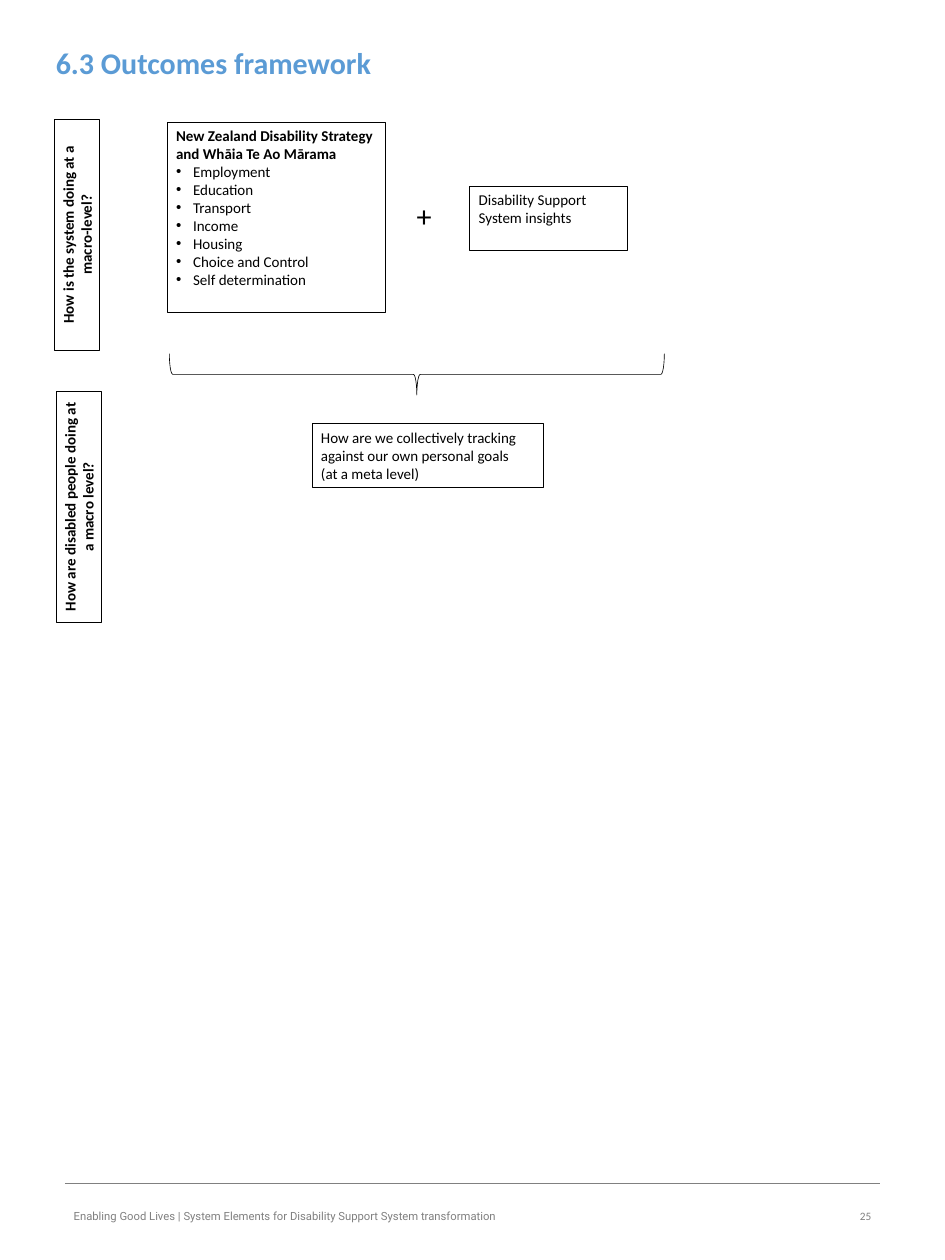
from dataclasses import dataclass

from lxml import etree
from pptx import Presentation
from pptx.dml.color import RGBColor
from pptx.enum import shapes, text
from pptx.oxml import ns
from pptx.util import Cm, Pt


@dataclass(frozen=True)
class Theme:
    font: str = "Calibri"
    footer_font: str = "Roboto"
    accent: RGBColor = RGBColor(0x5B, 0x9B, 0xD5)
    ink: RGBColor = RGBColor(0, 0, 0)
    muted: RGBColor = RGBColor(0x80, 0x80, 0x80)
    title: float = 24
    symbol: float = 24.1
    body: float = 12
    footer: float = 9


THEME = Theme()
LEFT, CENTER, RIGHT = text.PP_ALIGN.LEFT, text.PP_ALIGN.CENTER, text.PP_ALIGN.RIGHT
TOP, MIDDLE = text.MSO_ANCHOR.TOP, text.MSO_ANCHOR.MIDDLE
INDENT = Cm(0.48)
FOOTER_TOP, FOOTER_HEIGHT = 33.38, 1.9


def write(shape, lines, size=THEME.body, color=THEME.ink, font=THEME.font,
          bold=False, align=LEFT, anchor=TOP):
    frame = shape.text_frame
    frame.text = "\n".join(lines)
    frame.word_wrap = True
    frame.auto_size = text.MSO_AUTO_SIZE.NONE
    frame.vertical_anchor = anchor
    for para in frame.paragraphs:
        para.alignment = align
        for span in para.runs:
            span.font.name = font
            span.font.size = Pt(size)
            span.font.bold = bold
            span.font.color.rgb = color


def add_title(page, title):
    shape = page.shapes.title
    shape.left, shape.top, shape.width, shape.height = Cm(1.32), Cm(1.12), Cm(22.53), Cm(1.27)
    write(shape, [title], THEME.title, THEME.accent, bold=True)


def add_text(page, left, top, width, height, words, **style):
    box = page.shapes.add_textbox(Cm(left), Cm(top), Cm(width), Cm(height))
    write(box, [words], **style)


def add_outline(page, kind, left, top, width, height, weight=0.75, rotation=0):
    shape = page.shapes.add_shape(kind, Cm(left), Cm(top), Cm(width), Cm(height))
    shape.shadow.inherit = False
    shape.fill.background()
    shape.line.color.rgb = THEME.ink
    shape.line.width = Pt(weight)
    shape.rotation = rotation
    return shape


def add_box(page, left, top, width, height, lines, rotation=0, **style):
    box = add_outline(page, shapes.MSO_SHAPE.RECTANGLE, left, top, width, height,
                      rotation=rotation)
    write(box, lines, **style)
    return box


def add_side_label(page, left, top, question):
    add_box(page, left, top, 6.53, 1.27, [question], rotation=270, bold=True, align=CENTER)


def add_bullet(para):
    properties = para._p.get_or_add_pPr()
    properties.set("marL", str(INDENT))
    properties.set("indent", str(-INDENT))
    etree.SubElement(properties, ns.qn("a:buFont"), typeface="Arial")
    etree.SubElement(properties, ns.qn("a:buChar"), char="•")


def add_bullet_box(page, left, top, width, height, heading, items):
    box = add_box(page, left, top, width, height, [heading, *items])
    first, *rest = box.text_frame.paragraphs
    first.runs[0].font.bold = True
    for para in rest:
        add_bullet(para)


def add_rule(page, left, right, top):
    rule = page.shapes.add_connector(shapes.MSO_CONNECTOR.STRAIGHT,
                                     Cm(left), Cm(top), Cm(right), Cm(top))
    rule.line.color.rgb = THEME.muted
    rule.line.width = Pt(0.25)
    etree.SubElement(rule._element.spPr, ns.qn("a:effectLst"))


def add_footer(page, words, number):
    style = dict(size=THEME.footer, color=THEME.muted, anchor=MIDDLE)
    add_rule(page, 1.83, 24.84, FOOTER_TOP)
    add_text(page, 18.85, FOOTER_TOP, 5.99, FOOTER_HEIGHT, number, align=RIGHT, **style)
    add_text(page, 1.83, FOOTER_TOP, 15.8, FOOTER_HEIGHT, words,
             font=THEME.footer_font, **style)


def main():
    deck = Presentation()
    deck.slide_width, deck.slide_height = Cm(26.67), Cm(35.56)
    page = deck.slides.add_slide(deck.slide_layouts.get_by_name("Title Only"))

    add_title(page, "6.3 Outcomes framework")
    add_bullet_box(page, 4.72, 3.45, 6.16, 5.38,
                   "New Zealand Disability Strategy and Whāia Te Ao Mārama",
                   ["Employment", "Education", "Transport", "Income", "Housing",
                    "Choice and Control", "Self determination"])
    add_text(page, 11.51, 5.44, 2.01, 1.3, "+", size=THEME.symbol)
    add_box(page, 13.26, 5.26, 4.45, 1.8, ["Disability Support System insights"])
    add_outline(page, shapes.MSO_SHAPE.LEFT_BRACE, 11.18, 3.58, 1.17, 13.97,
                weight=0.5, rotation=270)
    add_box(page, 8.81, 11.96, 6.53, 1.8,
            ["How are we collectively tracking against our own personal goals",
             "(at a meta level)"])
    add_side_label(page, -1.09, 5.99, "How is the system doing at a macro-level?")
    add_side_label(page, -1.04, 13.67, "How are disabled people doing at a macro level?")
    add_footer(page, "Enabling Good Lives | System Elements for Disability Support "
                     "System transformation", "25")

    deck.save("out.pptx")


if __name__ == "__main__":
    main()
